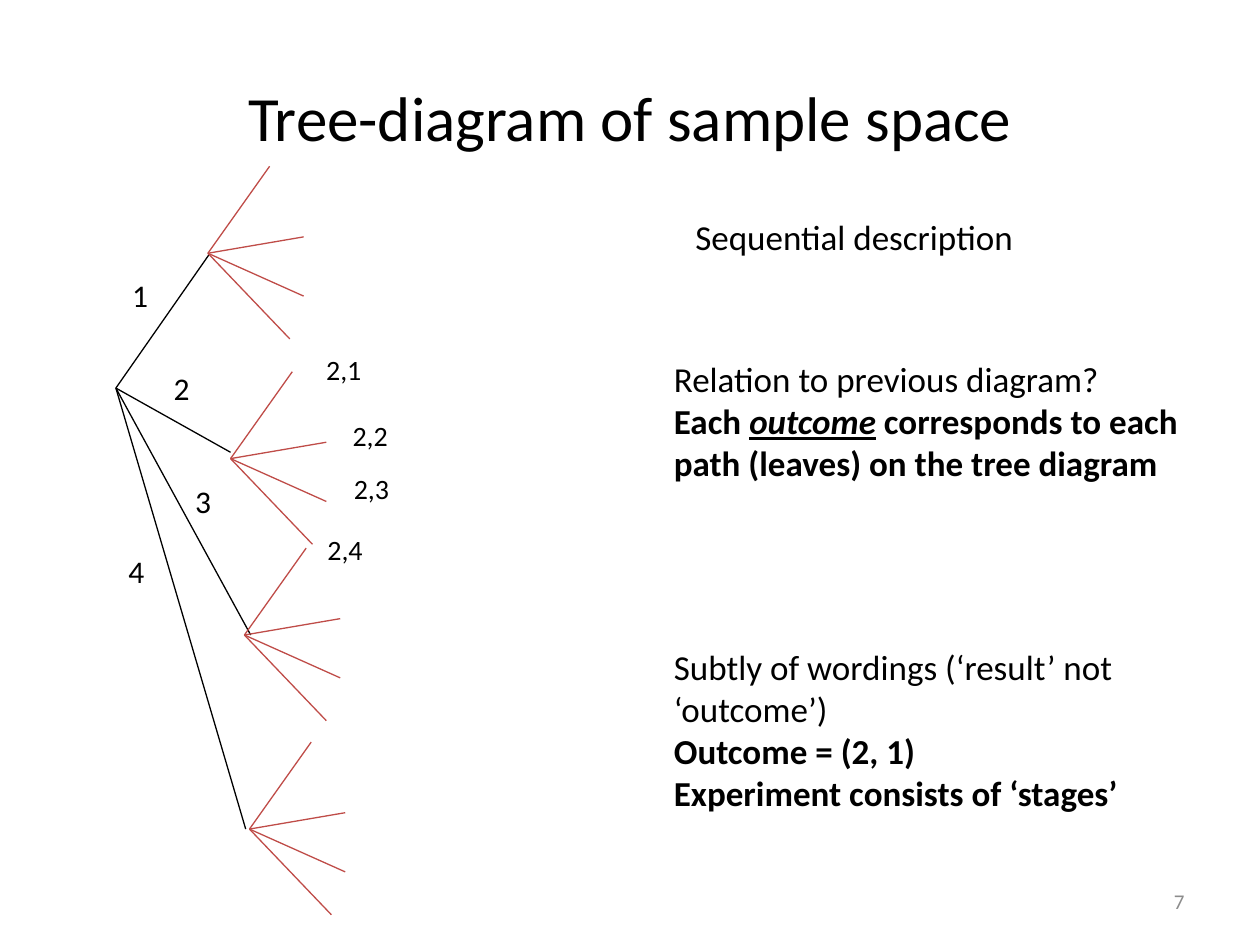
from dataclasses import dataclass

from lxml.etree import SubElement
from pptx import Presentation
from pptx.dml.color import RGBColor
from pptx.enum.shapes import MSO_CONNECTOR
from pptx.enum.text import MSO_ANCHOR, PP_ALIGN
from pptx.oxml.ns import qn
from pptx.util import Emu, Pt

PX = 9144  # 100 px to the inch


@dataclass(frozen=True)
class Theme:
    font: str = "Calibri"
    ink: str = "000000"
    leaf: str = "BF4C48"
    muted: str = "8C8C8C"
    line_width: float = 0.75
    title: int = 36
    body: int = 20
    branch: int = 18
    outcome: int = 16
    footer: int = 12


@dataclass(frozen=True)
class Span:
    text: str
    bold: bool = False
    emphasis: bool = False  # italic and underlined


@dataclass(frozen=True)
class Box:
    left: int
    top: int
    width: int
    height: int


@dataclass(frozen=True)
class Branch:
    label: str
    label_left: int
    label_top: int
    end: tuple[int, int]
    hub: tuple[int, int]


THEME = Theme()

# Tree: four branches from the root, each with the same fan of leaves
ROOT = (92, 308)
BRANCHES = [
    Branch("1", 95, 214, (166, 202), (165, 201)),
    Branch("2", 128, 288, (183, 359), (183, 364)),
    Branch("3", 145, 378, (199, 504), (194, 504)),
    Branch("4", 92, 433, (195, 658), (198, 658)),
]
LEAF_OFFSETS = [(49, -69), (76, -13), (76, 34), (65, 68)]
OUTCOMES = [("2,1", 249, 275), ("2,2", 270, 327), ("2,3", 271, 369), ("2,4", 250, 418)]

# Notes on the right
NOTES = [
    (Box(542, 166, 300, 44), [[Span("Sequential description")]]),
    (Box(525, 279, 457, 111), [
        [Span("Relation to previous diagram?")],
        [Span("Each ", True), Span("outcome", True, True),
         Span(" corresponds to each path (leaves) on the tree diagram", True)],
    ]),
    (Box(525, 507, 474, 145), [
        [Span("Subtly of wordings (‘result’ not ‘outcome’)")],
        [Span("Outcome = (2, 1)", True)],
        [Span("Experiment consists of ‘stages’", True)],
    ]),
]


def add_text(page, box: Box, paragraphs: list[list[Span]], size: int,
             color: str = THEME.ink, align=PP_ALIGN.LEFT, anchor=MSO_ANCHOR.TOP) -> None:
    shape = page.shapes.add_textbox(*(Emu(n * PX) for n in
                                      (box.left, box.top, box.width, box.height)))
    frame = shape.text_frame
    frame.word_wrap = True
    frame.vertical_anchor = anchor
    frame.text = "\n".join("" for _ in paragraphs)
    for para, spans in zip(frame.paragraphs, paragraphs):
        para.alignment = align
        for span in spans:
            run = para.add_run()
            run.text = span.text
            font = run.font
            font.name, font.size = THEME.font, Pt(size)
            font.color.rgb = RGBColor.from_string(color)
            font.bold = span.bold
            font.italic = font.underline = span.emphasis


def add_line(shapes, start: tuple[int, int], end: tuple[int, int], color: str) -> None:
    line = shapes.add_connector(MSO_CONNECTOR.STRAIGHT,
                                *(Emu(n * PX) for n in (*start, *end)))
    line.line.color.rgb = RGBColor.from_string(color)
    line.line.width = Pt(THEME.line_width)
    SubElement(line._element.spPr, qn("a:effectLst"))


def add_branch(page, branch: Branch) -> None:
    add_line(page.shapes, ROOT, branch.end, THEME.ink)
    fan = page.shapes.add_group_shape()
    x, y = branch.hub
    for dx, dy in LEAF_OFFSETS:
        add_line(fan.shapes, branch.hub, (x + dx, y + dy), THEME.leaf)
    add_text(page, Box(branch.label_left, branch.label_top, 33, 40),
             [[Span(branch.label)]], THEME.branch)


def main() -> None:
    deck = Presentation()
    deck.slide_width, deck.slide_height = Emu(1000 * PX), Emu(750 * PX)
    page = deck.slides.add_slide(deck.slide_layouts[6])

    # Title and page number
    add_text(page, Box(50, 30, 900, 125), [[Span("Tree-diagram of sample space")]],
             THEME.title, align=PP_ALIGN.CENTER, anchor=MSO_ANCHOR.MIDDLE)
    add_text(page, Box(717, 695, 233, 40), [[Span("7")]], THEME.footer, THEME.muted,
             PP_ALIGN.RIGHT, MSO_ANCHOR.MIDDLE)

    # Tree and outcome labels
    for branch in BRANCHES:
        add_branch(page, branch)
    for text, left, top in OUTCOMES:
        add_text(page, Box(left, top, 92, 37), [[Span(text)]], THEME.outcome)

    # Notes
    for box, paragraphs in NOTES:
        add_text(page, box, paragraphs, THEME.body)

    deck.save("out.pptx")


if __name__ == "__main__":
    main()
